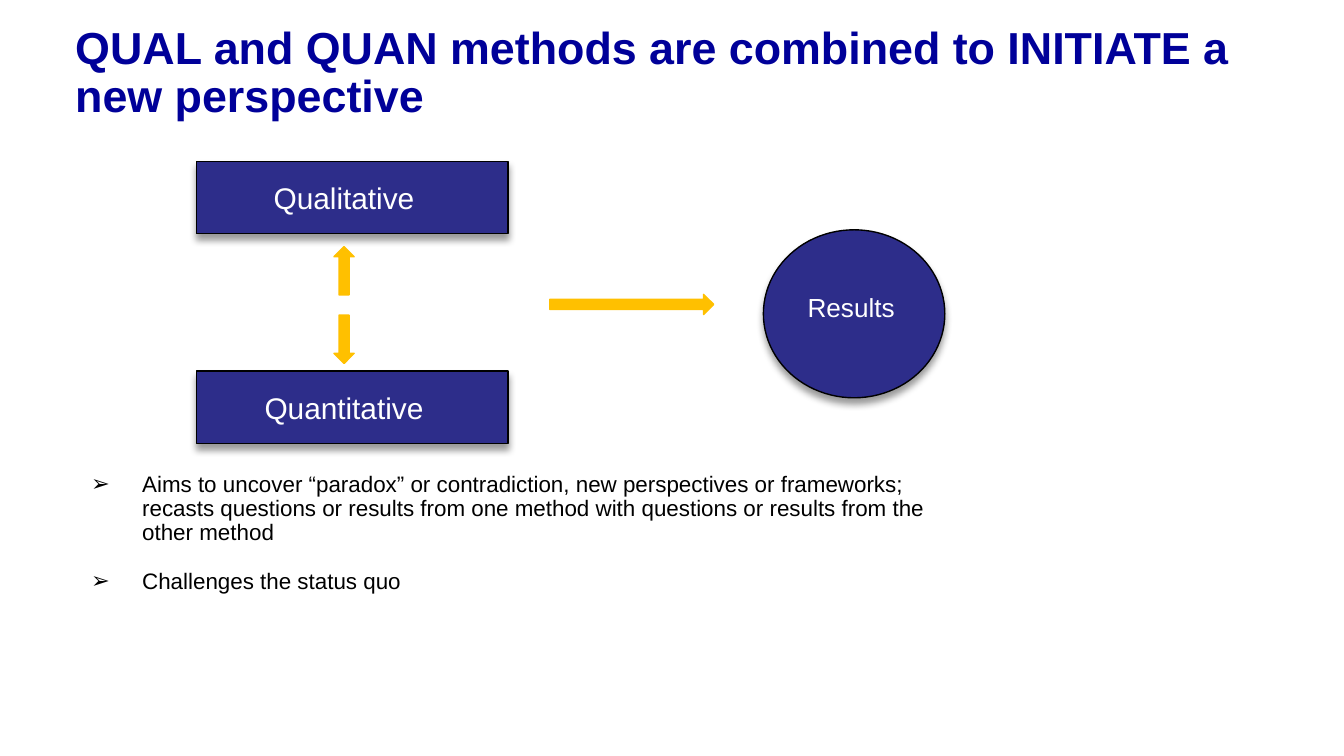
import pptx
import pptx.util
import pptx.oxml
import pptx.dml.color
import pptx.enum.shapes
import pptx.enum.text

Inches = pptx.util.Inches
Pt = pptx.util.Pt
Kind = pptx.enum.shapes.MSO_SHAPE
Align = pptx.enum.text.PP_ALIGN
Anchor = pptx.enum.text.MSO_ANCHOR
NS = 'xmlns:a="http://schemas.openxmlformats.org/drawingml/2006/main"'
SHADE = (
    f'<a:effectLst {NS}><a:outerShdw blurRad="{Pt(4)}" dist="{Pt(3)}" '
    'dir="5400000" rotWithShape="0"><a:srgbClr val="000000">'
    '<a:alpha val="40000"/></a:srgbClr></a:outerShdw></a:effectLst>'
)
MARKS = (f'<a:buFont {NS} typeface="Arial"/>', f'<a:buChar {NS} char="➢"/>')


def color(code):
    return pptx.dml.color.RGBColor.from_string(code)


class Deck:
    navy, gold, blue = "2D2D8A", "FFC000", "000099"
    black, white = "000000", "FFFFFF"
    face = "Arial"

    def __init__(self, wide, high):
        self.file = pptx.Presentation()
        self.file.slide_width = Inches(wide)
        self.file.slide_height = Inches(high)
        self.slide = self.file.slides.add_slide(self.file.slide_layouts[5])

    def style(self, para, size, code, bold=False, **form):
        for key, value in form.items():
            setattr(para, key, value)
        looks = {"name": self.face, "size": Pt(size), "bold": bold}
        for key, value in looks.items():
            setattr(para.font, key, value)
        para.font.color.rgb = color(code)

    def title(self, box, text):
        head = self.slide.shapes.title
        for key, value in zip(("left", "top", "width", "height"), box):
            setattr(head, key, Inches(value))
        frame = head.text_frame
        frame.text = text
        frame.word_wrap = True
        frame.auto_size = pptx.enum.text.MSO_AUTO_SIZE.NONE
        frame.vertical_anchor = Anchor.TOP
        self.style(frame.paragraphs[0], 24, self.blue, True,
                   alignment=Align.LEFT, line_spacing=0.9)

    def shape(self, kind, box, fill, line, turn=0, shade=False):
        item = self.slide.shapes.add_shape(kind, *map(Inches, box))
        item.rotation = turn
        item.fill.solid()
        item.fill.fore_color.rgb = color(fill)
        item.line.color.rgb = color(line)
        item.line.width = Pt(0.75)
        item.shadow.inherit = False
        if shade:
            empty = item._element.spPr.find("{*}effectLst")
            empty.getparent().replace(empty, pptx.oxml.parse_xml(SHADE))

    def block(self, kind, box):
        self.shape(kind, box, self.navy, self.black, shade=True)

    def arrow(self, box, turn=0):
        self.shape(Kind.RIGHT_ARROW, box, self.gold, self.gold, turn)

    def frame(self, box):
        frame = self.slide.shapes.add_textbox(*map(Inches, box)).text_frame
        frame.word_wrap = True
        return frame

    def label(self, box, text, size, align=Align.CENTER, drop=0.05):
        frame = self.frame(box)
        frame.margin_top = Inches(drop)
        frame.text = text
        self.style(frame.paragraphs[0], size, self.white, alignment=align)

    def list(self, box, items, gap):
        frame = self.frame(box)
        for i, text in enumerate(items):
            para = frame.add_paragraph() if i else frame.paragraphs[0]
            para.text = text
            props = para._p.get_or_add_pPr()
            props.set("marL", str(Inches(0.38)))
            props.set("indent", str(-Inches(0.38)))
            for mark in MARKS:
                props.append(pptx.oxml.parse_xml(mark))
            self.style(para, 12, self.black, line_spacing=0.9,
                       space_before=Pt(gap if i else 0))


def main():
    deck = Deck(10, 10 * 9 / 16)
    deck.title((0.46, 0.14, 9.07, 0.71),
               "QUAL and QUAN methods are combined to INITIATE a new perspective")

    # Two methods
    for top, name in ((1.2, "Qualitative"), (2.76, "Quantitative")):
        deck.block(Kind.RECTANGLE, (1.46, top, 2.32, 0.54))
        deck.label((1.59, top + 0.09, 1.94, 0.37), name, 16)

    # Results
    deck.block(Kind.OVAL, (5.68, 1.71, 1.35, 1.25))
    deck.label((5.91, 1.89, 0.98, 0.98), "Results", 14, Align.LEFT, 0.28)

    # Arrows
    deck.arrow((4.09, 2.19, 1.22, 0.15))
    for top, turn in ((1.94, 270), (2.45, 90)):
        deck.arrow((2.38, top, 0.36, 0.15), turn)

    # Aims
    deck.list((0.58, 3.47, 6.77, 0.87), (
        "Aims to uncover “paradox” or contradiction, new perspectives or "
        "frameworks; recasts questions or results from one method with "
        "questions or results from the other method",
        "Challenges the status quo",
    ), 13)

    deck.file.save("out.pptx")


if __name__ == "__main__":
    main()
